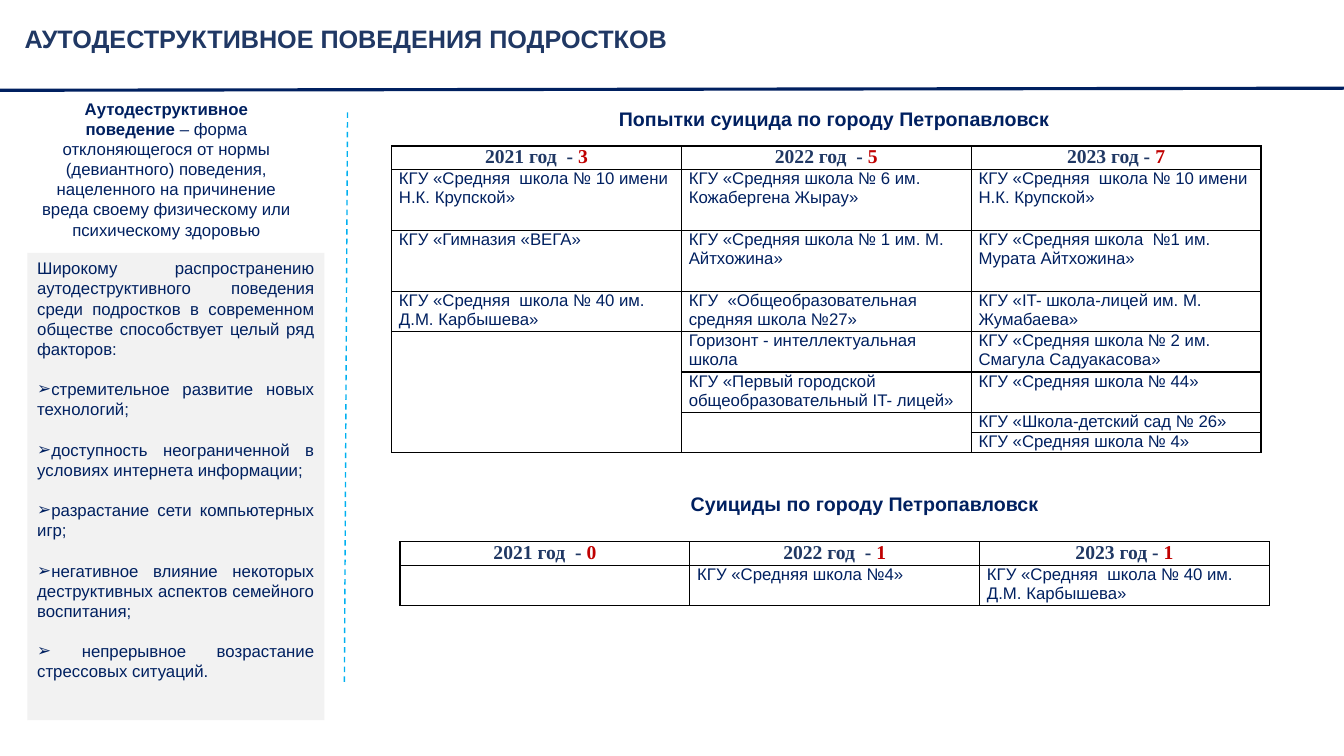
from dataclasses import dataclass

from lxml.etree import SubElement
from pptx import Presentation
from pptx.dml.color import RGBColor as Color
from pptx.enum.dml import MSO_LINE_DASH_STYLE as Dash
from pptx.enum.shapes import MSO_CONNECTOR as Connector, MSO_SHAPE as Shape
from pptx.enum.text import MSO_ANCHOR as Anchor, PP_ALIGN as Align
from pptx.oxml.ns import qn
from pptx.util import Pt

EMU_PER_PX = 9525


@dataclass(frozen=True)
class Theme:
    navy: str = "002060"
    title: str = "203864"
    red: str = "C00000"
    panel: str = "F2F2F2"
    divider: str = "00B0F0"
    border: str = "000000"
    sans: str = "Arial"
    serif: str = "Times New Roman"
    body_size: int = 12
    heading_size: int = 14
    title_size: int = 18
    factor_gap: float = 14.4


THEME = Theme()


@dataclass(frozen=True)
class Box:
    left: int
    top: int
    width: int
    height: int

    def emu(self) -> tuple[int, ...]:
        return tuple(px(value) for value in (self.left, self.top, self.width, self.height))


@dataclass(frozen=True)
class Heading:
    text: str
    box: Box
    size: int = THEME.heading_size
    color: str = THEME.navy
    align: Align = Align.CENTER
    anchor: Anchor = Anchor.TOP


@dataclass(frozen=True)
class Rule:
    start: tuple[int, int]
    end: tuple[int, int]
    color: str
    weight: float
    dash: Dash = Dash.SOLID


@dataclass(frozen=True)
class YearTable:
    left: int
    top: int
    row_heights: tuple[int, ...]
    years: tuple[tuple[str, str], ...]
    schools: tuple[tuple[str, ...], ...]
    merges: tuple[tuple[int, int, int], ...] = ()
    column_width: int = 276


HEADINGS = (
    Heading("АУТОДЕСТРУКТИВНОЕ ПОВЕДЕНИЯ ПОДРОСТКОВ", Box(14, 17, 1241, 38),
            THEME.title_size, THEME.title, Align.LEFT),
    Heading("Попытки суицида по городу Петропавловск", Box(395, 97, 799, 33)),
    Heading("Суициды по городу Петропавловск", Box(424, 441, 799, 55), anchor=Anchor.BOTTOM),
)

RULES = (
    Rule((331, 107), (328, 652), THEME.divider, 1, Dash.DASH),
    Rule((0, 86), (1280, 84), THEME.navy, 2.25),
)

DEFINITION_TERM = "Аутодеструктивное поведение "
DEFINITION = ("– форма отклоняющегося от нормы (девиантного) поведения, нацеленного на "
              "причинение вреда своему физическому или психическому здоровью")
FACTORS_INTRO = ("Широкому распространению аутодеструктивного поведения среди подростков "
                 "в современном обществе способствует целый ряд факторов: ")
FACTORS = (
    "стремительное развитие новых технологий; ",
    "доступность неограниченной в условиях интернета информации;",
    "разрастание сети компьютерных игр;",
    "негативное влияние некоторых деструктивных аспектов семейного воспитания;",
    " непрерывное возрастание стрессовых ситуаций.",
)

TABLES = (
    YearTable(
        373, 139, (22, 58, 58, 38, 38, 38, 19, 19),
        (("2021 год  - ", "3"), ("2022 год  - ", "5"), ("2023 год - ", "7")),
        (
            ("КГУ «Средняя  школа № 10 имени Н.К. Крупской»",
             "КГУ «Средняя школа № 6 им. Кожабергена Жырау»",
             "КГУ «Средняя  школа № 10 имени Н.К. Крупской»"),
            ("КГУ «Гимназия «ВЕГА»",
             "КГУ «Средняя школа № 1 им. М. Айтхожина»",
             "КГУ «Средняя школа  №1 им. Мурата Айтхожина»"),
            ("КГУ «Средняя  школа № 40 им. Д.М. Карбышева»",
             "КГУ  «Общеобразовательная средняя школа №27»",
             "КГУ «IT- школа-лицей им. М. Жумабаева»"),
            ("", "Горизонт - интеллектуальная школа",
             "КГУ «Средняя школа № 2 им. Смагула Садуакасова»"),
            ("", "КГУ «Первый городской общеобразовательный IT- лицей»",
             "КГУ «Средняя школа № 44»"),
            ("", "", "КГУ «Школа-детский сад № 26»"),
            ("", "", "КГУ «Средняя школа № 4»"),
        ),
        merges=((0, 4, 7), (1, 6, 7)),
    ),
    YearTable(
        381, 516, (22, 38),
        (("2021 год  - ", "0"), ("2022 год  - ", "1"), ("2023 год - ", "1")),
        (("", "КГУ «Средняя школа №4»", "КГУ «Средняя  школа № 40 им. Д.М. Карбышева»"),),
    ),
)


def px(value: int) -> int:
    return value * EMU_PER_PX


def add_text(paragraph, text: str, *, size: int = THEME.body_size, color: str = THEME.navy,
             font: str = THEME.sans, bold: bool = False, align: Align = Align.LEFT) -> None:
    paragraph.alignment = align
    run = paragraph.add_run()
    run.text = text
    run.font.name = font
    run.font.size = Pt(size)
    run.font.bold = bold
    run.font.color.rgb = Color.from_string(color)


def add_text_box(slide, box: Box, anchor: Anchor = Anchor.TOP):
    frame = slide.shapes.add_textbox(*box.emu()).text_frame
    frame.word_wrap = True
    frame.vertical_anchor = anchor
    return frame.paragraphs[0]


def draw_heading(slide, heading: Heading) -> None:
    paragraph = add_text_box(slide, heading.box, heading.anchor)
    add_text(paragraph, heading.text, size=heading.size, color=heading.color,
             bold=True, align=heading.align)


def draw_rule(slide, rule: Rule) -> None:
    ends = (px(value) for value in rule.start + rule.end)
    connector = slide.shapes.add_connector(Connector.STRAIGHT, *ends)
    connector.line.color.rgb = Color.from_string(rule.color)
    connector.line.width = Pt(rule.weight)
    connector.line.dash_style = rule.dash
    SubElement(connector._element.spPr, qn("a:effectLst"))


def draw_definition(slide) -> None:
    paragraph = add_text_box(slide, Box(27, 89, 263, 145))
    add_text(paragraph, DEFINITION_TERM, bold=True, align=Align.CENTER)
    add_text(paragraph, DEFINITION, align=Align.CENTER)


def draw_factors(slide) -> None:
    panel = slide.shapes.add_shape(Shape.RECTANGLE, *Box(26, 241, 283, 445).emu())
    panel.shadow.inherit = False
    panel.fill.solid()
    panel.fill.fore_color.rgb = Color.from_string(THEME.panel)
    panel.line.fill.background()
    frame = panel.text_frame
    frame.word_wrap = True
    frame.vertical_anchor = Anchor.TOP
    add_text(frame.paragraphs[0], FACTORS_INTRO, align=Align.JUSTIFY)
    for factor in FACTORS:
        paragraph = frame.add_paragraph()
        add_text(paragraph, factor, align=Align.JUSTIFY)
        paragraph.space_before = Pt(THEME.factor_gap)
        properties = paragraph._p.get_or_add_pPr()
        properties.set("marL", "0")
        properties.set("indent", str(px(-30)))
        SubElement(properties, qn("a:buFont"), typeface=THEME.sans)
        SubElement(properties, qn("a:buChar"), char="➢")


def format_cell(cell) -> None:
    cell.margin_left = cell.margin_right = px(7)
    cell.margin_top = cell.margin_bottom = 0
    properties = cell._tc.get_or_add_tcPr()
    for side in ("lnL", "lnR", "lnT", "lnB"):
        line = SubElement(properties, qn(f"a:{side}"), w=str(Pt(1)))
        fill = SubElement(line, qn("a:solidFill"))
        SubElement(fill, qn("a:srgbClr"), val=THEME.border)
    cell.fill.background()


def draw_table(slide, data: YearTable) -> None:
    box = Box(data.left, data.top, data.column_width * len(data.years), sum(data.row_heights))
    table = slide.shapes.add_table(len(data.row_heights), len(data.years), *box.emu()).table
    table.first_row = table.horz_banding = False
    for row, height in zip(table.rows, data.row_heights):
        row.height = px(height)
    for cell in table.iter_cells():
        format_cell(cell)
    for column, (year, count) in enumerate(data.years):
        paragraph = table.cell(0, column).text_frame.paragraphs[0]
        for text, color in ((year, THEME.title), (count, THEME.red)):
            add_text(paragraph, text, size=THEME.heading_size, color=color,
                     font=THEME.serif, bold=True, align=Align.CENTER)
    for row, schools in enumerate(data.schools, 1):
        for column, school in enumerate(schools):
            paragraph = table.cell(row, column).text_frame.paragraphs[0]
            if school:
                add_text(paragraph, school)
            else:
                SubElement(paragraph._p, qn("a:endParaRPr"), sz=str(THEME.body_size * 100))
    for column, first, last in data.merges:
        table.cell(first, column).merge(table.cell(last, column))


def main() -> None:
    presentation = Presentation()
    presentation.slide_width, presentation.slide_height = px(1280), px(720)
    slide = presentation.slides.add_slide(presentation.slide_layouts[6])
    draw_factors(slide)
    draw_definition(slide)
    for rule in RULES:
        draw_rule(slide, rule)
    for heading in HEADINGS:
        draw_heading(slide, heading)
    for table in TABLES:
        draw_table(slide, table)
    presentation.save("out.pptx")


if __name__ == "__main__":
    main()
